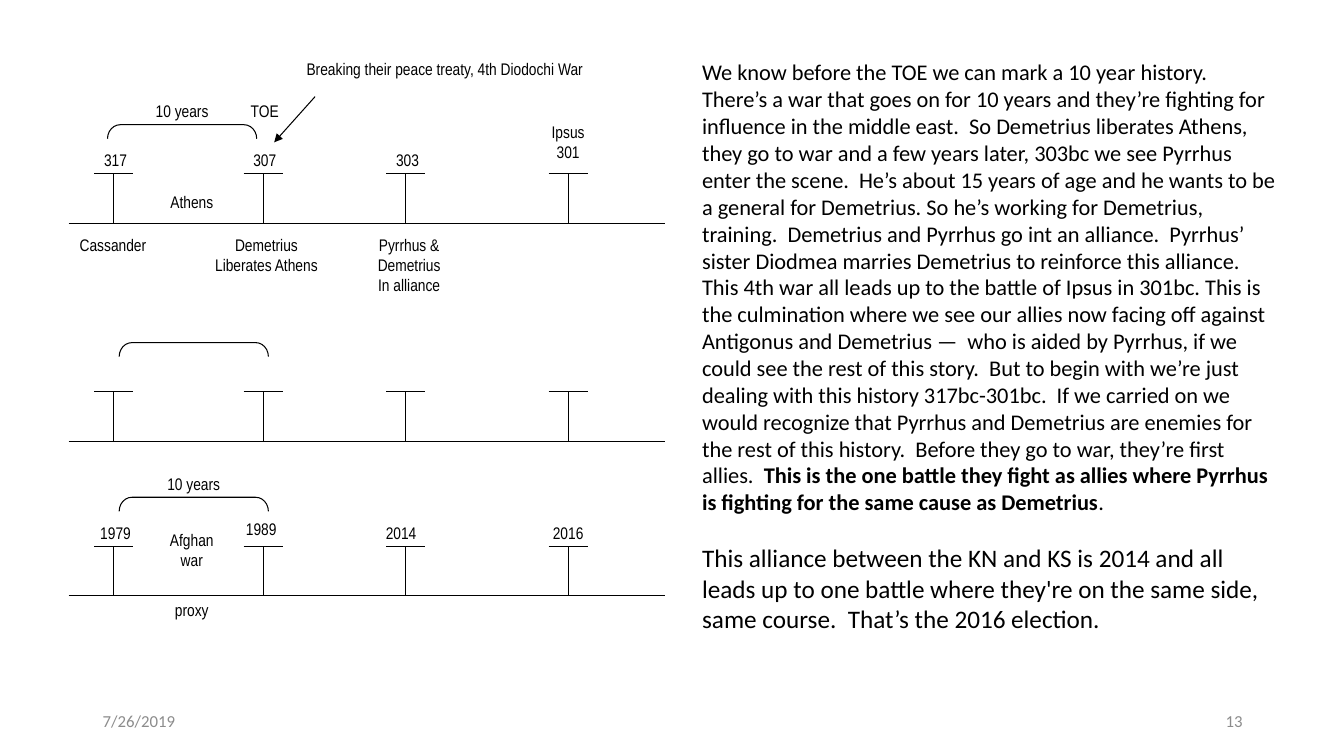
from dataclasses import dataclass

from pptx import Presentation
from pptx.dml.color import RGBColor
from pptx.enum.shapes import MSO_CONNECTOR, MSO_SHAPE
from pptx.enum.text import MSO_ANCHOR, MSO_AUTO_SIZE, PP_ALIGN
from pptx.oxml.ns import qn
from pptx.util import Inches, Pt
from lxml import etree

STRAIGHT = MSO_CONNECTOR.STRAIGHT
BRACKET = MSO_SHAPE.LEFT_BRACKET
LEFT, CENTER, RIGHT = PP_ALIGN.LEFT, PP_ALIGN.CENTER, PP_ALIGN.RIGHT
TOP, MIDDLE = MSO_ANCHOR.TOP, MSO_ANCHOR.MIDDLE
GROW, FIXED = MSO_AUTO_SIZE.SHAPE_TO_FIT_TEXT, MSO_AUTO_SIZE.NONE


@dataclass(frozen=True)
class Theme:
    ink: RGBColor = RGBColor(0, 0, 0)
    gray: RGBColor = RGBColor(0x8C, 0x8C, 0x8C)
    body: str = "Calibri"
    narrow: str = "Arial Narrow"
    small: float = 12
    text: float = 16
    large: float = 18
    gap: float = 19.5
    rule: float = 0.75


THEME = Theme()
WIDTH, HEIGHT = Inches(13.33), Inches(7.5)
X0, Y0 = Inches(0.68), Inches(0.54)
COL, ROW = Inches(5.92) / 92, Inches(5.37) / 77
SPAN = 92
DATES = (7, 30, 52, 77)
BASES = (24, 55, 77)
STEM, CAP = 7, 3
BRACES = ((6, 10), (7.8, 41), (7.8, 63))
LINE = 4.6

LABELS = (
    (32, 0, 52, LINE, ["Breaking their peace treaty, 4th Diodochi War"]),
    (12, 6, 11, LINE, ["10 years"]),
    (27, 6, 6.5, LINE, ["TOE"]),
    (4, 13, 6.5, LINE, ["317"]),
    (27, 13, 6.5, LINE, ["307"]),
    (49, 13, 6.5, LINE, ["303"]),
    (71, 9, 12, 8.6, ["Ipsus", "301"]),
    (12, 19, 14, LINE, ["Athens"]),
    (0, 25, 13.7, LINE, ["Cassander"]),
    (21, 25, 19, 8, ["Demetrius", "Liberates Athens"]),
    (44.5, 25, 16, 11, ["Pyrrhus & Demetrius", "In alliance"]),
    (13.8, 59, 11, LINE, ["10 years"]),
    (4, 66, 6.5, LINE, ["1979"]),
    (25, 65.5, 9.4, 4, ["1989"]),
    (47, 66, 8.5, LINE, ["2014"]),
    (71, 66, 12, LINE, ["2016"]),
    (12, 67, 14, 9.6, ["Afghan", "war"]),
    (11, 77, 16, 5.5, ["proxy"]),
)

RISE = (
    "We know before the TOE we can mark a 10 year history.  There’s a war that goes on "
    "for 10 years and they’re fighting for influence in the middle east.  So Demetrius "
    "liberates Athens, they go to war and a few years later, 303bc we see Pyrrhus enter "
    "the scene.  He’s about 15 years of age and he wants to be a general for Demetrius. "
    "So he’s working for Demetrius, training.  Demetrius and Pyrrhus go int an alliance.  "
    "Pyrrhus’ sister Diodmea marries Demetrius to reinforce this alliance.  "
)
BATTLE = (
    "This 4th war all leads up to the battle of Ipsus in 301bc. This is the culmination "
    "where we see our allies now facing off against Antigonus and Demetrius —  who is "
    "aided by Pyrrhus, if we could see the rest of this story.  But to begin with we’re "
    "just dealing with this history 317bc-301bc.  If we carried on we would recognize "
    "that Pyrrhus and Demetrius are enemies for the rest of this history.  Before they "
    "go to war, they’re first allies.  "
)
POINT = (
    "This is the one battle they fight as allies where Pyrrhus is fighting for the same "
    "cause as Demetrius"
)
CLOSE = (
    "This alliance between the KN and KS is 2014 and all leads up to one battle where "
    "they're on the same side, same course.  That’s the 2016 election."
)


def spot(col, row):
    return round(X0 + col * COL), round(Y0 + row * ROW)


def cell(col, row, cols, rows):
    return *spot(col, row), round(cols * COL), round(rows * ROW)


def share(left, top, width, height):
    return (round(WIDTH * left / 100), round(HEIGHT * top / 100),
            round(WIDTH * width / 100), round(HEIGHT * height / 100))


def write(slide, box, paras, font=THEME.body, size=THEME.small, color=THEME.ink,
          align=LEFT, anchor=TOP, inset=None, fit=FIXED, last=None, gap=0):
    frame = slide.shapes.add_textbox(*box).text_frame
    frame.word_wrap = True
    frame.auto_size = fit
    frame.vertical_anchor = anchor
    if inset is not None:
        frame.margin_left = frame.margin_right = inset
        frame.margin_top = frame.margin_bottom = inset
    for index, runs in enumerate(paras):
        para = frame.paragraphs[0] if index == 0 else frame.add_paragraph()
        para.alignment = align
        if index:
            para.space_before = Pt(gap)
        for text, bold in [(runs, False)] if isinstance(runs, str) else runs:
            run = para.add_run()
            run.text = text
            run.font.name = font
            run.font.size = Pt(last if last and index == len(paras) - 1 else size)
            run.font.bold = bold
            run.font.color.rgb = color


def rule(slide, start, end, arrow=False):
    line = slide.shapes.add_connector(STRAIGHT, *spot(*start), *spot(*end))
    line.line.color.rgb = THEME.ink
    line.line.width = Pt(THEME.rule)
    props = line._element.spPr
    if arrow:
        etree.SubElement(props.find(qn("a:ln")), qn("a:tailEnd"), type="triangle")
    etree.SubElement(props, qn("a:effectLst"))


def brace(slide, col, row):
    left, top, width, height = cell(col, row, 23, 2)
    shift = (width - height) // 2
    shape = slide.shapes.add_shape(BRACKET, left + shift, top - shift, height, width)
    shape.rotation = 90
    shape.adjustments[0] = 0.91
    shape.shadow.inherit = False
    shape.fill.background()
    shape.line.color.rgb = THEME.ink
    shape.line.width = Pt(THEME.rule)


def timeline(slide, base):
    rule(slide, (0, base), (SPAN, base))
    top = base - STEM
    for date in DATES:
        rule(slide, (date, top), (date, base))
        rule(slide, (date - CAP, top), (date + CAP, top))


def main():
    deck = Presentation()
    deck.slide_width, deck.slide_height = WIDTH, HEIGHT
    slide = deck.slides.add_slide(deck.slide_layouts[6])

    for left, text, align in ((6.9, "7/26/2019", LEFT), (70.7, "13", RIGHT)):
        write(slide, share(left, 92.7, 22.5, 5.3), [text], color=THEME.gray,
              align=align, anchor=MIDDLE)
    for base in BASES:
        timeline(slide, base)
    for col, row in BRACES:
        brace(slide, col, row)
    rule(slide, (38, 6), (31.7, 12.5), arrow=True)
    for *place, lines in LABELS:
        write(slide, cell(*place), lines, font=THEME.narrow, align=CENTER,
              inset=Inches(0.04))
    write(slide, share(51.5, 7.1, 44.3, 80.8),
          [[(RISE + BATTLE, False), (POINT, True), (".", False)], CLOSE],
          size=THEME.text, last=THEME.large, gap=THEME.gap, fit=GROW)
    deck.save("out.pptx")


if __name__ == "__main__":
    main()
